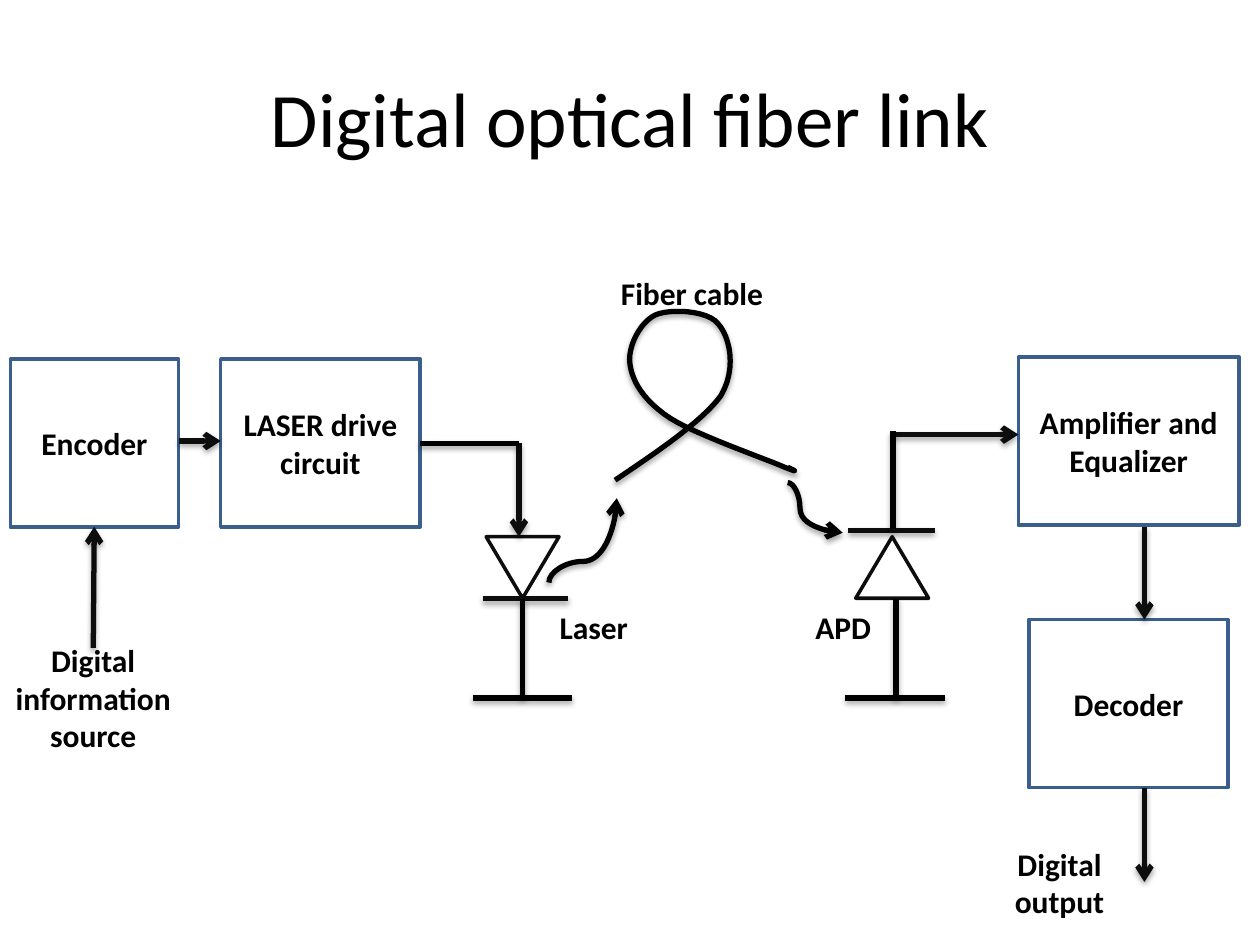
"""Build a slide with the block diagram of a digital optical fiber link."""
from lxml import etree
from pptx import Presentation
from pptx.dml.color import RGBColor
from pptx.enum.shapes import MSO_CONNECTOR, MSO_SHAPE
from pptx.enum.text import MSO_ANCHOR, PP_ALIGN
from pptx.oxml import parse_xml
from pptx.oxml.ns import qn
from pptx.util import Cm, Pt

STRAIGHT, CURVE = MSO_CONNECTOR.STRAIGHT, MSO_CONNECTOR.CURVE
RECTANGLE, DIODE = MSO_SHAPE.RECTANGLE, MSO_SHAPE.FLOWCHART_MERGE
MIDDLE, CENTER = MSO_ANCHOR.MIDDLE, PP_ALIGN.CENTER
BLACK = RGBColor(0x00, 0x00, 0x00)
INK = RGBColor(0x0D, 0x0D, 0x0D)
BLUE = RGBColor(0x3A, 0x5F, 0x8C)
SHADOW = (
    '<a:effectLst xmlns:a="http://schemas.openxmlformats.org/drawingml/2006/main">'
    '<a:outerShdw blurRad="40000" dist="23000" dir="5400000" rotWithShape="0">'
    '<a:srgbClr val="000000"><a:alpha val="35000"/></a:srgbClr>'
    "</a:outerShdw></a:effectLst>"
)


def write(shape, text, size, bold):
    frame = shape.text_frame
    frame.text = text
    frame.word_wrap = True
    frame.vertical_anchor = MIDDLE
    para = frame.paragraphs[0]
    para.alignment = CENTER
    font = para.runs[0].font
    font.name, font.size, font.bold = "Calibri", Pt(size), bold
    font.color.rgb = BLACK


def draw_stroke(shape, color, arrow=False):
    shape.line.color.rgb = color
    shape.line.width = Pt(3)
    properties = shape._element.spPr
    if arrow:
        etree.SubElement(properties.find(qn("a:ln")), qn("a:tailEnd"), type="arrow")
    properties.append(parse_xml(SHADOW))


deck = Presentation()
deck.slide_width, deck.slide_height = Cm(25.4), Cm(19.05)
page = deck.slides.add_slide(deck.slide_layouts[5])
shapes = page.shapes

title = shapes.title
title.left, title.top, title.width, title.height = Cm(1.27), Cm(0.76), Cm(22.86), Cm(3.18)
write(title, "Digital optical fiber link", 44, False)

blocks = [
    ("Encoder", 0.21, 7.24, 3.39),
    ("LASER drive circuit", 4.45, 7.24, 4.02),
    ("Amplifier and Equalizer", 20.53, 7.2, 4.45),
    ("Decoder", 20.74, 12.49, 4.02),
]
for name, left, top, width in blocks:
    block = shapes.add_shape(RECTANGLE, Cm(left), Cm(top), Cm(width), Cm(3.39))
    block.shadow.inherit = False
    block.fill.background()
    block.line.color.rgb = BLUE
    block.line.width = Pt(2)
    write(block, name, 18, True)

for left, angle in [(9.8, 0), (17.25, 180)]:
    diode = shapes.add_shape(DIODE, Cm(left), Cm(10.82), Cm(1.47), Cm(1.24))
    diode.rotation = angle
    diode.shadow.inherit = False
    diode.fill.background()
    diode.line.color.rgb = INK
    diode.line.width = Pt(2)

wires = [
    (3.6, 8.89, 4.45, 8.89, INK, True),
    (17.99, 8.76, 20.53, 8.76, INK, True),
    (23.07, 10.62, 23.07, 12.49, INK, True),
    (23.07, 15.88, 23.07, 17.78, INK, True),
    (1.88, 13.06, 1.9, 10.62, INK, True),
    (10.46, 8.94, 10.46, 10.82, INK, True),
    (9.73, 12.07, 11.46, 12.07, INK, False),
    (17.1, 10.69, 18.84, 10.69, INK, False),
    (8.46, 8.94, 10.46, 8.94, BLACK, False),
    (9.53, 14.07, 11.53, 14.07, BLACK, False),
    (10.54, 14.07, 10.54, 12.07, BLACK, False),
    (17.04, 14.07, 19.05, 14.07, BLACK, False),
    (18.06, 14.07, 18.06, 12.07, BLACK, False),
    (18, 10.67, 18, 8.69, BLACK, False),
]
for x1, y1, x2, y2, color, arrow in wires:
    wire = shapes.add_connector(STRAIGHT, Cm(x1), Cm(y1), Cm(x2), Cm(y2))
    draw_stroke(wire, color, arrow)

light_rays = [
    (12.6, 11.58, 10.9, 10.21, 90, 25000),
    (15.88, 9.73, 16.99, 10.74, 0, 22300),
]
for x1, y1, x2, y2, angle, bend in light_rays:
    ray = shapes.add_connector(CURVE, Cm(x1), Cm(y1), Cm(x2), Cm(y2))
    draw_stroke(ray, BLACK, True)
    properties = ray._element.spPr
    properties.find(qn("a:xfrm")).set("rot", str(angle * 60000))
    guides = properties.find(qn("a:prstGeom")).find(qn("a:avLst"))
    etree.SubElement(guides, qn("a:gd"), name="adj1", fmla=f"val {bend}")

start = (12.4, 9.68)
fiber_curves = [
    ((13.28, 9.09), (14.17, 8.48), (14.53, 7.98)),
    ((14.86, 7.44), (14.71, 6.78), (14.48, 6.53)),
    ((14.27, 6.25), (13.49, 6.22), (13.21, 6.35)),
    ((12.9, 6.5), (12.65, 6.99), (12.7, 7.34)),
    ((12.75, 7.7), (12.98, 8.08), (13.51, 8.43)),
    ((14.02, 8.76), (15.44, 9.25), (15.82, 9.42)),
    ((16.23, 9.58), (15.88, 9.42), (15.88, 9.42)),
]
STEPS = 12
points = []
corner = start
for curve in fiber_curves:
    for step in range(1, STEPS + 1):
        t = step / STEPS
        weights = ((1 - t) ** 3, 3 * t * (1 - t) ** 2, 3 * t**2 * (1 - t), t**3)
        x, y = (sum(w * v for w, v in zip(weights, axis)) for axis in zip(corner, *curve))
        points.append((Cm(x), Cm(y)))
    corner = curve[-1]
builder = shapes.build_freeform(Cm(start[0]), Cm(start[1]))
builder.add_line_segments(points, close=False)
fiber = builder.convert_to_shape()
fiber.fill.background()
draw_stroke(fiber, BLACK)

labels = [
    ("Fiber cable", 11.94, 4.83),
    ("Laser", 9.96, 11.56),
    ("APD", 14.99, 11.56),
    ("Digital information source", -0.13, 12.98),
    ("Digital output", 19.35, 16.71),
]
for text, left, top in labels:
    label = shapes.add_textbox(Cm(left), Cm(top), Cm(4.02), Cm(2.16))
    write(label, text, 18, True)

deck.save("out.pptx")
